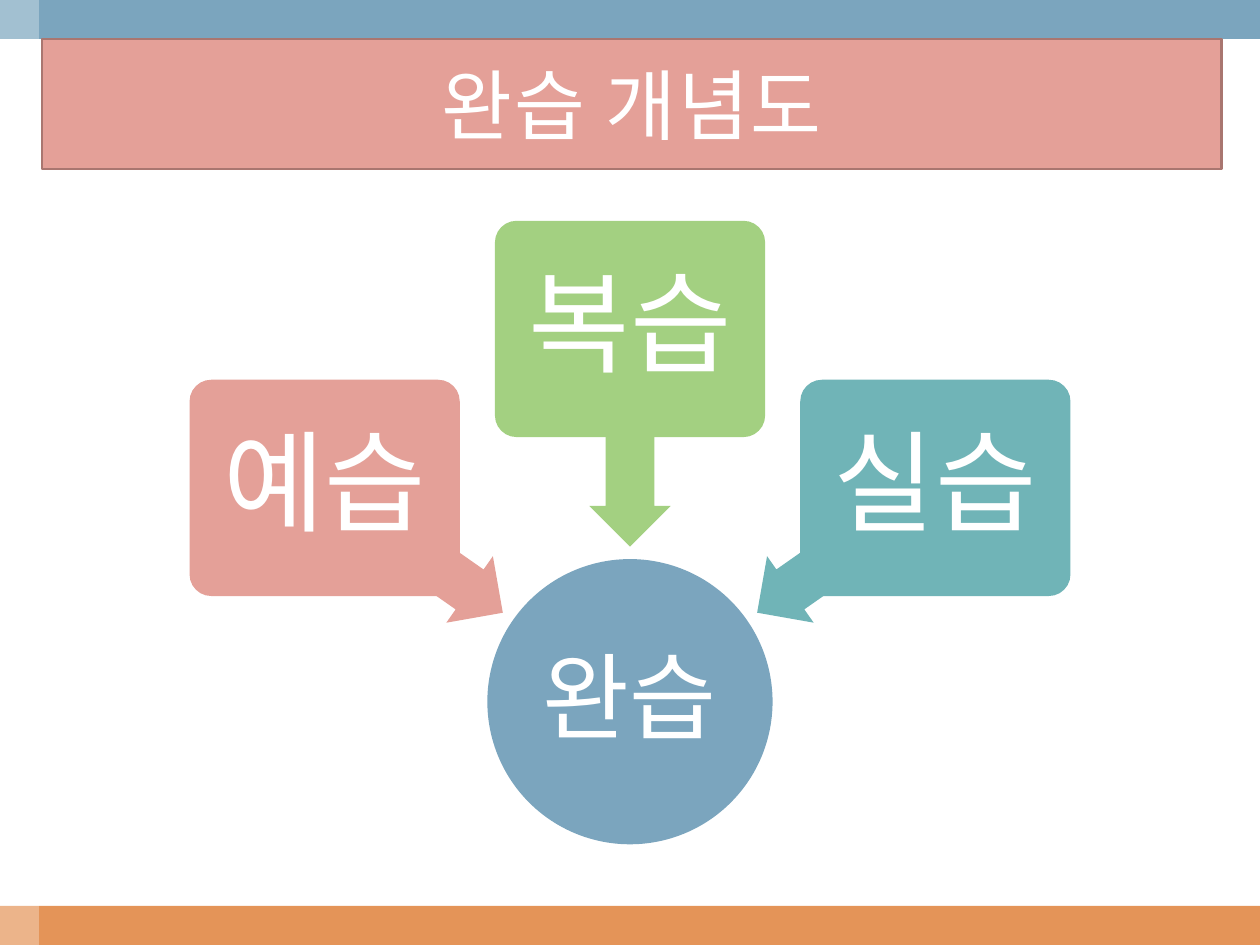
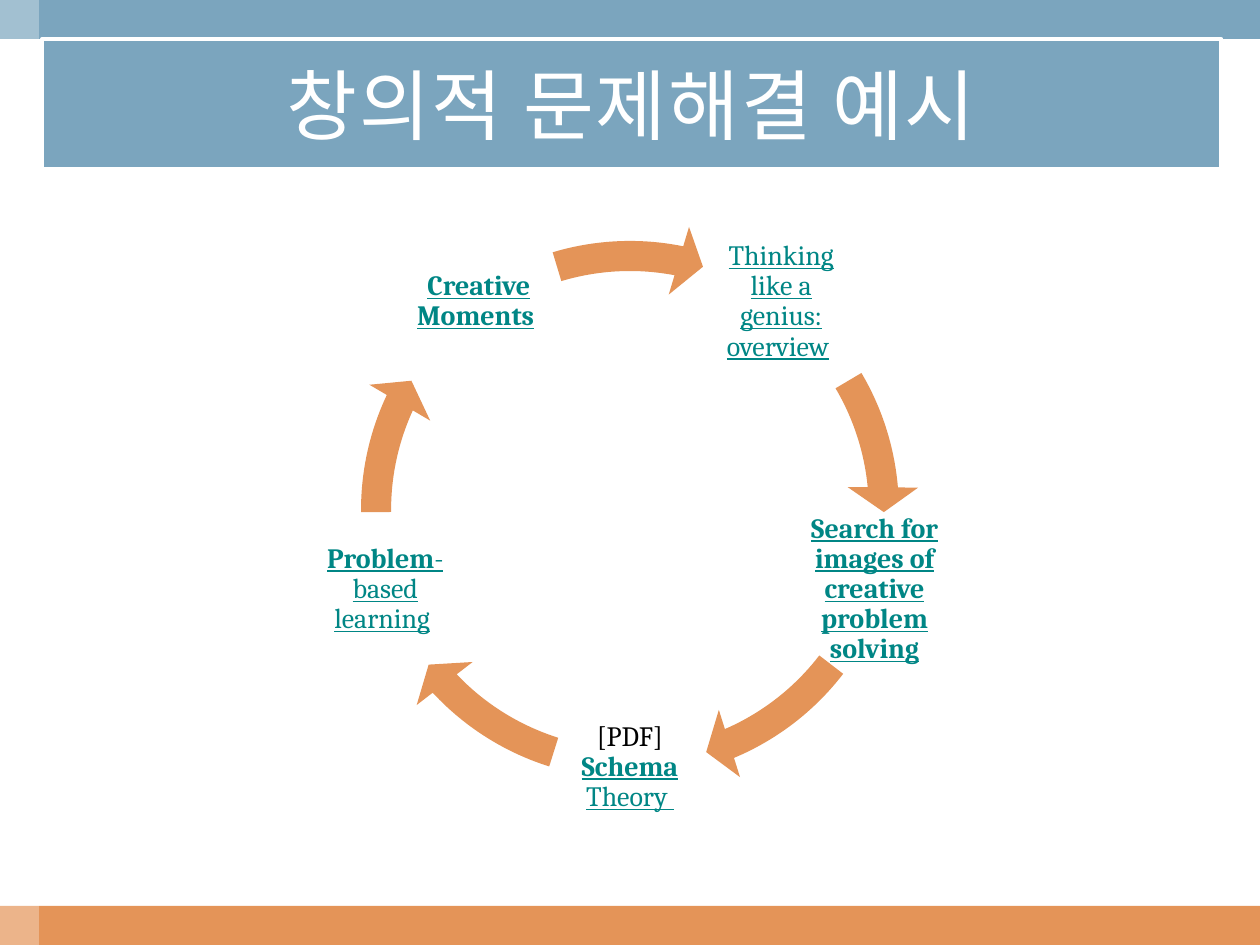
import math

from lxml import etree
from pptx import Presentation
from pptx.dml.color import RGBColor
from pptx.enum import shapes, text
from pptx.oxml import ns
from pptx.util import Pt

WIDTH, HEIGHT, BAND = 720, 540, 22.3
COLORS = {
    "blue": "7BA5BE", "orange": "E49458", "pink": "E4A098", "green": "A3D081",
    "teal": "70B4B7", "link": "008685", "brick": "A97670",
    "white": "FFFFFF", "black": "000000",
}
LINK = {"underline": True, "color": "link"}
BOLD_LINK = {**LINK, "bold": True}
KIND = shapes.MSO_SHAPE


def rgb(name):
    return RGBColor.from_string(COLORS[name])


def polar(center, radius, degrees):
    """Point at an angle that runs clockwise from the right."""
    a = math.radians(degrees)
    return center[0] + radius * math.cos(a), center[1] + radius * math.sin(a)


def centered(center, w, h):
    return center[0] - w / 2, center[1] - h / 2, w, h


class Deck:
    font = "Cambria"

    def __init__(self):
        self.prs = Presentation()
        self.prs.slide_width, self.prs.slide_height = Pt(WIDTH), Pt(HEIGHT)
        self.s = None

    def new_slide(self, title, fill, line, line_width):
        self.s = self.prs.slides.add_slide(self.prs.slide_layouts[6])
        self.shape(KIND.RECTANGLE, (0, HEIGHT - BAND, WIDTH, BAND), "orange")
        self.shape(KIND.RECTANGLE, (0, 0, WIDTH, BAND), "blue")
        self.shape(KIND.RECTANGLE, (0, 0, BAND, HEIGHT), "white", alpha=30)
        sp = self.shape(KIND.RECTANGLE, (24, BAND, 674, 74.2), fill)
        sp.line.color.rgb = rgb(line)
        sp.line.width = Pt(line_width)
        self.set_text(sp, [(title, {"color": "white"})], 44, spacing=1, tracking=1)

    def shape(self, kind, box, fill, adjust=(), rotation=0, alpha=None):
        sp = self.s.shapes.add_shape(kind, *map(Pt, box))
        sp.shadow.inherit = False
        sp.rotation = rotation
        sp.fill.solid()
        sp.fill.fore_color.rgb = rgb(fill)
        sp.line.fill.background()
        for i, value in enumerate(adjust):
            sp.adjustments[i] = value
        if alpha is not None:
            color = sp.element.spPr.find(".//" + ns.qn("a:srgbClr"))
            etree.SubElement(color, ns.qn("a:alpha"), val=str(alpha * 1000))
        return sp

    def label(self, box, runs, size):
        self.set_text(self.s.shapes.add_textbox(*map(Pt, box)), runs, size, inset=1.6)

    def set_text(self, sp, runs, size, inset=3.6, wrap=True, spacing=0.9, tracking=0):
        tf = sp.text_frame
        frame_format = {
            "word_wrap": wrap, "vertical_anchor": text.MSO_ANCHOR.MIDDLE,
            **{f"margin_{side}": Pt(inset) for side in ("left", "top", "right", "bottom")},
        }
        for name, value in frame_format.items():
            setattr(tf, name, value)
        p = tf.paragraphs[0]
        p.alignment, p.line_spacing = text.PP_ALIGN.CENTER, spacing
        for words, style in runs:
            r = p.add_run()
            r.text = words
            font_format = {"name": self.font, "size": Pt(size), **style}
            r.font.color.rgb = rgb(font_format.pop("color"))
            for name, value in font_format.items():
                setattr(r.font, name, value)
            if tracking:
                r.font._element.set("spc", str(tracking * 100))


def mastery_slide(deck):
    deck.new_slide("완습 개념도", "pink", "brick", 1.25)
    hub = (360, 401)
    white = {"color": "white"}
    sp = deck.shape(KIND.OVAL, centered(hub, 163, 163), "blue")
    deck.set_text(sp, [("완습", white)], 54, wrap=False)
    steps = [("예습", "pink", 215), ("복습", "green", 270), ("실습", "teal", 325)]
    for word, color, angle in steps:
        deck.shape(KIND.LEFT_ARROW, centered(polar(hub, 151, angle), 124.6, 46.4),
                   color, (0.6, 0.5), angle)
        sp = deck.shape(KIND.ROUNDED_RECTANGLE,
                        centered(polar(hub, 213, angle), 154.4, 123.6), color, (0.1,))
        deck.set_text(sp, [(word, white)], 63, wrap=False)


def examples_slide(deck):
    deck.new_slide("창의적 문제해결 예시", "blue", "white", 2.25)
    center = (360, 291.4)
    black = {"color": "black"}
    # runs of each label, then start and end angle of the arrow that follows it
    steps = [
        ([("Thinking like a genius: overview", LINK), (" ", black)], 329.4, 354.9),
        ([("Search for images of creative problem solving", BOLD_LINK)], 37.55, 66.93),
        ([("[PDF] ", black), ("Schema", BOLD_LINK), (" Theory ", LINK)], 107.48, 136.86),
        ([("Problem", BOLD_LINK), ("-based learning", LINK), (" ", black)], 179.5, 204.98),
        ([("Creative Moments", BOLD_LINK), (" ", black)], 253.3, 281.11),
    ]
    per_degree = 0.6  # adjustment units in one degree
    for i, (runs, start, end) in enumerate(steps):
        angle = -54 + i * 360 / len(steps)
        deck.label(centered(polar(center, 147, angle), 88, 88), runs, 16)
        deck.shape(KIND.CIRCULAR_ARROW, centered(center, 330.5, 330.5), "orange",
                   (0.052, 5.6 * per_degree, end * per_degree, start * per_degree, 0.061))


def main():
    deck = Deck()
    mastery_slide(deck)
    examples_slide(deck)
    deck.prs.save("out.pptx")


if __name__ == "__main__":
    main()
